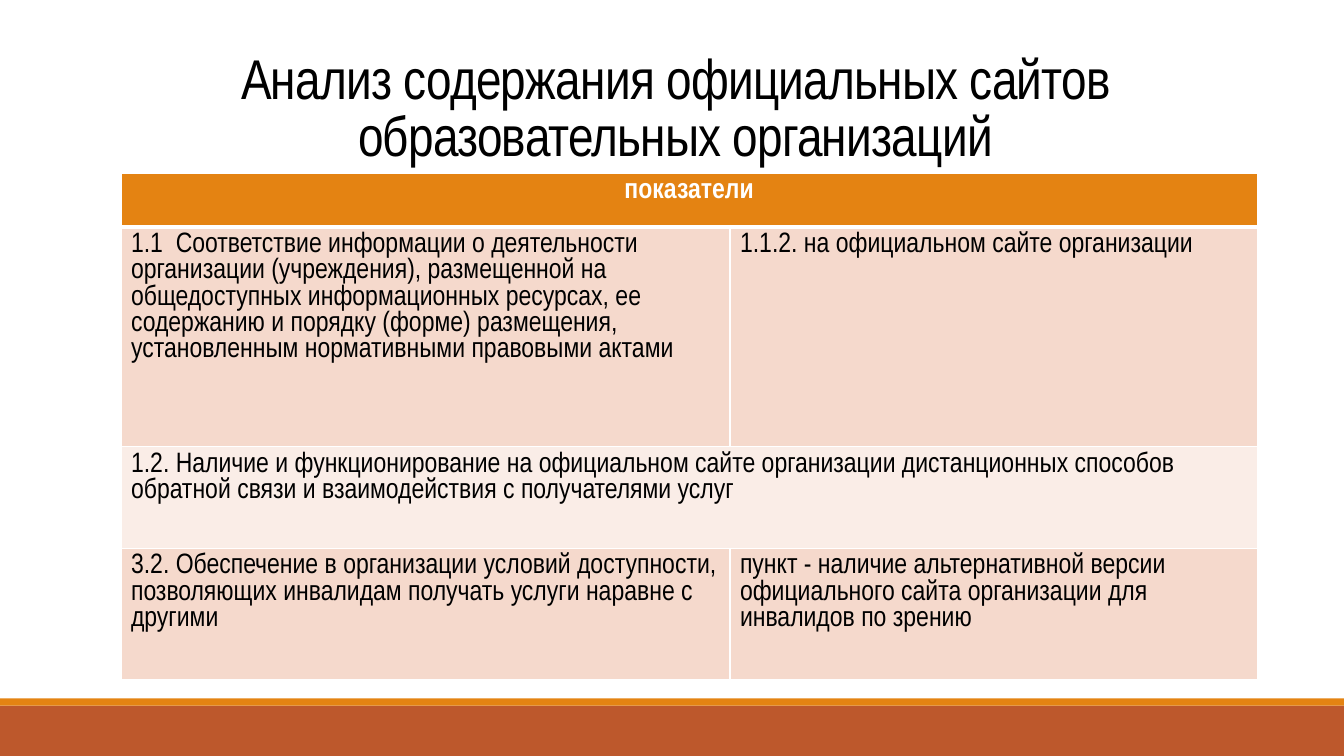
from dataclasses import dataclass

from lxml.etree import SubElement
from pptx import Presentation
from pptx.dml.color import RGBColor
from pptx.enum.shapes import MSO_SHAPE
from pptx.enum.text import MSO_ANCHOR, PP_ALIGN
from pptx.oxml.ns import qn
from pptx.slide import Slide
from pptx.table import Table, _Cell
from pptx.util import Inches, Pt

WHITE = RGBColor(0xFF, 0xFF, 0xFF)
BLACK = RGBColor(0x00, 0x00, 0x00)
ORANGE = RGBColor(0xE4, 0x83, 0x12)
RUST = RGBColor(0xBD, 0x58, 0x2C)
PINK = RGBColor(0xF5, 0xD9, 0xCC)
PALE_PINK = RGBColor(0xFA, 0xED, 0xE7)
FONT = "Arial Narrow"
SLIDE_WIDTH = 13.33
COLUMN_WIDTHS = (6.04, 5.23)


@dataclass(frozen=True)
class Band:
    top: float
    height: float
    color: RGBColor


@dataclass(frozen=True)
class IndicatorRow:
    height: float
    fill: RGBColor
    texts: tuple[str, ...]
    header: bool = False


BANDS = (Band(7, 0.5, RUST), Band(6.93, 0.07, ORANGE))
ROWS = (
    IndicatorRow(0.53, ORANGE, ("показатели",), header=True),
    IndicatorRow(2.18, PINK, (
        "1.1  Соответствие информации о деятельности организации (учреждения), "
        "размещенной на общедоступных информационных ресурсах, ее содержанию и "
        "порядку (форме) размещения, установленным нормативными правовыми актами",
        "1.1.2. на официальном сайте организации",
    )),
    IndicatorRow(1.01, PALE_PINK, (
        "1.2. Наличие и функционирование на официальном сайте организации "
        "дистанционных способов обратной связи и взаимодействия с получателями услуг",
    )),
    IndicatorRow(1.3, PINK, (
        "3.2. Обеспечение в организации условий доступности, позволяющих "
        "инвалидам получать услуги наравне с другими",
        "пункт - наличие альтернативной версии официального сайта организации "
        "для инвалидов по зрению",
    )),
)


def add_band(slide: Slide, band: Band) -> None:
    shape = slide.shapes.add_shape(
        MSO_SHAPE.RECTANGLE, 0, Inches(band.top), Inches(SLIDE_WIDTH), Inches(band.height)
    )
    shape.shadow.inherit = False
    shape.fill.solid()
    shape.fill.fore_color.rgb = band.color
    shape.line.fill.background()


def format_title(slide: Slide) -> None:
    title = slide.shapes.title
    title.left, title.top = Inches(1.2), Inches(0.31)
    title.width, title.height = Inches(11), Inches(1.41)
    frame = title.text_frame
    frame.text = "Анализ содержания официальных сайтов образовательных организаций"
    frame.word_wrap = True
    frame.vertical_anchor = MSO_ANCHOR.BOTTOM
    paragraph = frame.paragraphs[0]
    paragraph.alignment = PP_ALIGN.CENTER
    paragraph.line_spacing = 0.85
    paragraph.font.name = FONT
    paragraph.font.size = Pt(40)
    paragraph.font.color.rgb = BLACK
    paragraph.runs[0].font._element.set("spc", "-50")


def set_borders(cell: _Cell, bottom_width: float) -> None:
    properties = cell._tc.get_or_add_tcPr()
    widths = {"a:lnL": 1, "a:lnR": 1, "a:lnT": 1, "a:lnB": bottom_width}
    for tag, width in widths.items():
        border = SubElement(properties, qn(tag), w=str(Pt(width)))
        fill = SubElement(border, qn("a:solidFill"))
        SubElement(fill, qn("a:srgbClr"), val=str(WHITE))


def fill_row(table: Table, index: int, row: IndicatorRow) -> None:
    table.rows[index].height = Inches(row.height)
    cells = list(table.rows[index].cells)
    for cell in cells:
        set_borders(cell, 3 if row.header else 1)
        cell.fill.solid()
        cell.fill.fore_color.rgb = row.fill
    if len(row.texts) == 1:
        cells[0].merge(cells[-1])
    for cell, text in zip(cells, row.texts):
        cell.text = text
        paragraph = cell.text_frame.paragraphs[0]
        paragraph.alignment = PP_ALIGN.CENTER if row.header else PP_ALIGN.LEFT
        paragraph.font.name = FONT
        paragraph.font.size = Pt(20)
        paragraph.font.bold = row.header
        paragraph.font.color.rgb = WHITE if row.header else BLACK


def add_indicator_table(slide: Slide) -> None:
    table = slide.shapes.add_table(
        len(ROWS), len(COLUMN_WIDTHS), Inches(1.2), Inches(1.72),
        Inches(sum(COLUMN_WIDTHS)), Inches(sum(row.height for row in ROWS)),
    ).table
    for column, width in zip(table.columns, COLUMN_WIDTHS):
        column.width = Inches(width)
    for index, row in enumerate(ROWS):
        fill_row(table, index, row)


def main() -> None:
    presentation = Presentation()
    presentation.slide_width = Inches(SLIDE_WIDTH)
    presentation.slide_height = Inches(7.5)
    slide = presentation.slides.add_slide(presentation.slide_layouts[5])
    for band in BANDS:
        add_band(slide, band)
    format_title(slide)
    add_indicator_table(slide)
    presentation.save("out.pptx")


if __name__ == "__main__":
    main()
